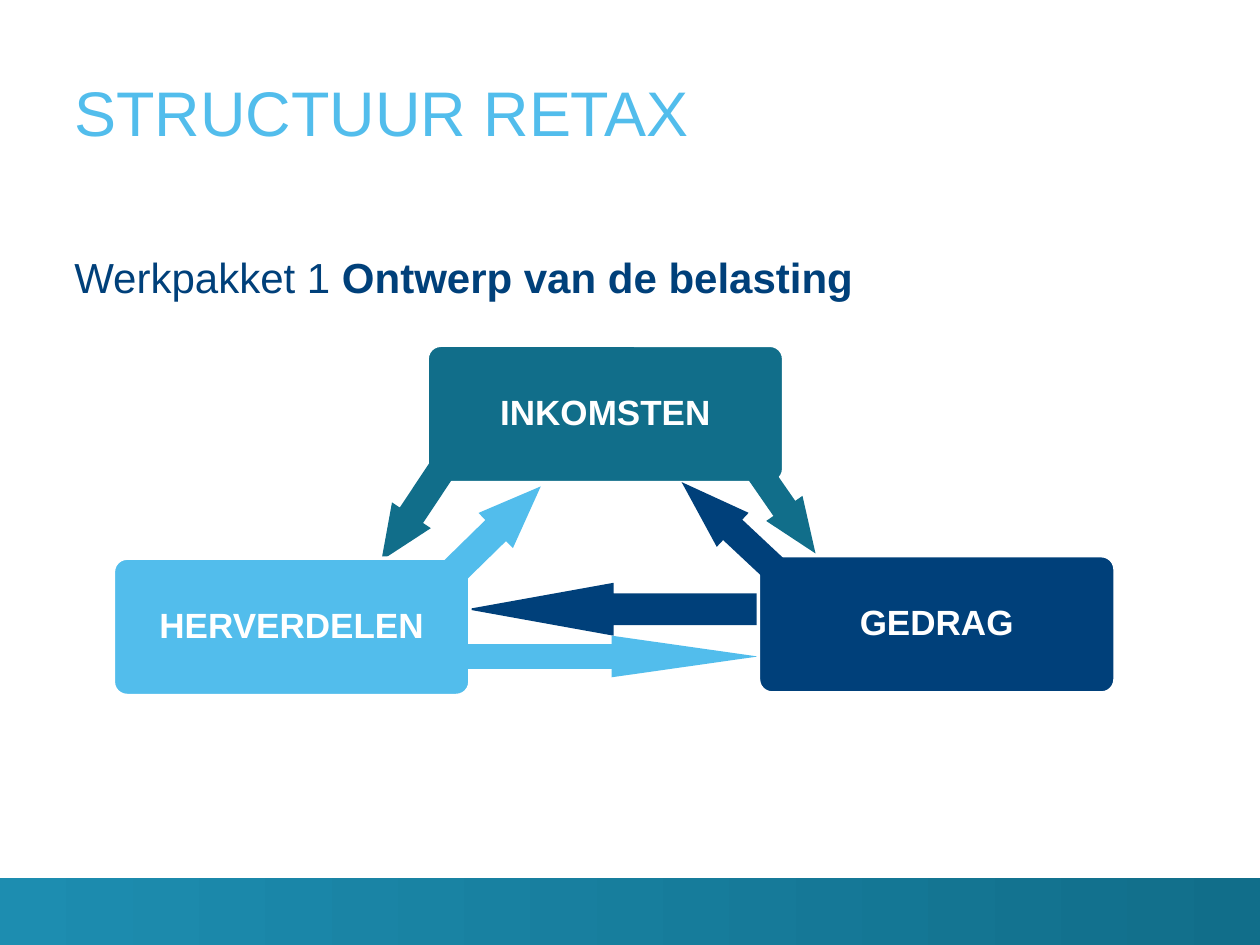
from pptx import Presentation
from pptx.dml.color import RGBColor
from pptx.enum.shapes import MSO_SHAPE as Preset
from pptx.enum.text import MSO_ANCHOR as Anchor, PP_ALIGN as Align
from pptx.util import Inches, Pt

COLORS = {
    "sky": "52BDEC",
    "navy": "00407A",
    "teal": "116E8A",
    "bright_teal": "1D8DB0",
    "white": "FFFFFF",
}

presentation = Presentation()
presentation.slide_width = Inches(10)
presentation.slide_height = Inches(7.5)
COLUMN = presentation.slide_width / 100
ROW = presentation.slide_height / 75
slide = presentation.slides.add_slide(presentation.slide_layouts[6])


def color(name):
    return RGBColor.from_string(COLORS[name])


def place(preset, left, top, width, height, fill=None):
    area = (round(left * COLUMN), round(top * ROW), round(width * COLUMN), round(height * ROW))
    if preset is None:
        shape = slide.shapes.add_textbox(*area)
    else:
        shape = slide.shapes.add_shape(preset, *area)
        shape.shadow.inherit = False
        shape.line.fill.background()
    if fill:
        shape.fill.solid()
        shape.fill.fore_color.rgb = color(fill)
    return shape


footer = place(Preset.RECTANGLE, 0, 69.7, 100, 5.3)
footer.fill.gradient()
footer.fill.gradient_angle = 0
for stop, name, position in zip(footer.fill.gradient_stops, ("bright_teal", "teal"), (0, 1)):
    stop.color.rgb = color(name)
    stop.position = position

headings = [
    (2, 97.0 - 5.9, 9.8, Anchor.BOTTOM, 36, "sky", [("STRUCTUUR RETAX", False)]),
    (20, 86.6, 4, Anchor.TOP, 24, "navy",
     [("Werkpakket 1 ", False), ("Ontwerp van de belasting", True)]),
]
for top, width, height, anchor, size, name, runs in headings:
    frame = place(None, 5.9, top, width, height).text_frame
    frame.word_wrap = True
    frame.vertical_anchor = anchor
    frame.margin_left = frame.margin_top = frame.margin_right = frame.margin_bottom = 0
    paragraph = frame.paragraphs[0]
    paragraph.font.name = "Arial"
    paragraph.font.size = Pt(size)
    paragraph.font.color.rgb = color(name)
    for text, bold in runs:
        run = paragraph.add_run()
        run.text = text
        run.font.bold = bold

BOX_WIDTH, BOX_HEIGHT = 28.3, 10.9
diagram = [
    ("arrow", "navy", 46.6, 36.7, 4.2, 23.3, 90),
    ("box", "teal", 33.9, 27.4, "INKOMSTEN"),
    ("arrow", "teal", 30.8, 36.6, 3.7, 8.6, 33.6),
    ("box", "sky", 9, 44.3, "HERVERDELEN"),
    ("arrow", "sky", 46.9, 40.5, 3.3, 23.2, 270),
    ("box", "navy", 60.2, 44.1, "GEDRAG"),
    ("arrow", "sky", 37.4, 37.1, 3.9, 10, 225.6),
    ("arrow", "teal", 60.5, 36, 3.5, 8.7, 325.3),
    ("arrow", "navy", 56.3, 36.5, 3.7, 11.1, 133.1),
]
for kind, name, left, top, *details in diagram:
    if kind == "arrow":
        width, height, rotation = details
        arrow = place(Preset.DOWN_ARROW, left, top, width, height, name)
        arrow.rotation = rotation
        arrow.adjustments[0] = 0.6
        arrow.adjustments[1] = 0.5 * height / width
        continue
    box = place(Preset.ROUNDED_RECTANGLE, left, top, BOX_WIDTH, BOX_HEIGHT, name)
    box.adjustments[0] = 0.1
    box.line.color.rgb = color("white")
    box.line.width = Pt(2)
    frame = box.text_frame
    frame.word_wrap = True
    frame.vertical_anchor = Anchor.MIDDLE
    frame.margin_left = frame.margin_top = frame.margin_right = frame.margin_bottom = Inches(0.12)
    paragraph = frame.paragraphs[0]
    paragraph.text = details[0]
    paragraph.alignment = Align.CENTER
    paragraph.line_spacing = 0.9
    paragraph.font.name = "Arial"
    paragraph.font.size = Pt(20)
    paragraph.font.bold = True
    paragraph.font.color.rgb = color("white")

presentation.save("out.pptx")
